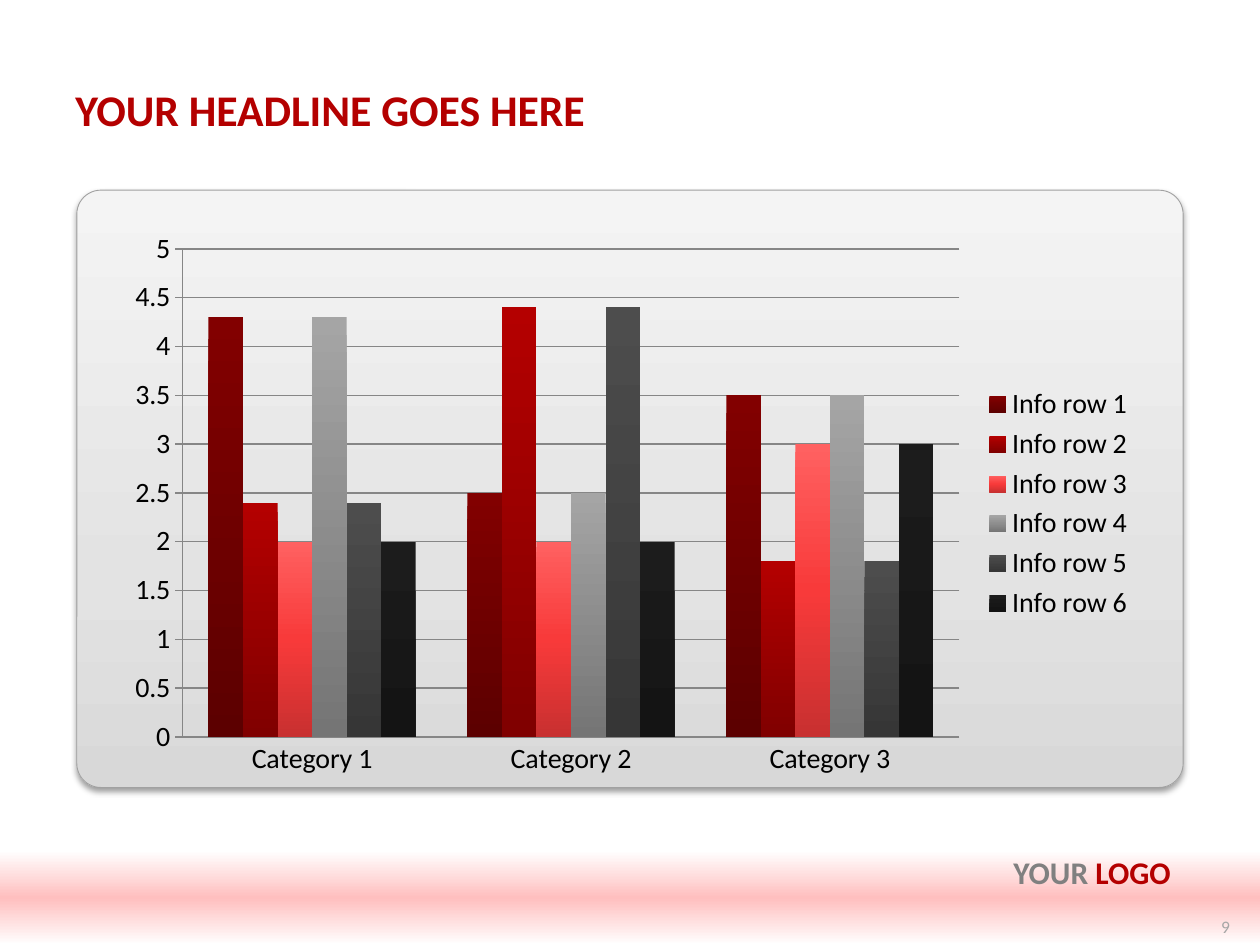
import pptx
import pptx.chart.data
import pptx.dml.color
import pptx.enum.chart
import pptx.enum.shapes
import pptx.enum.text
import pptx.oxml
import pptx.oxml.ns
import pptx.util
from lxml import etree

Inches, Pt = pptx.util.Inches, pptx.util.Pt
qn = pptx.oxml.ns.qn
shapes = pptx.enum.shapes.MSO_SHAPE
kinds = pptx.enum.chart
aligns = pptx.enum.text.PP_ALIGN
anchors = pptx.enum.text.MSO_ANCHOR


def color(code):
    return pptx.dml.color.RGBColor.from_string(code)


def grade(fill, props, stops):
    fill.gradient()
    fill.gradient_angle = 270
    stop_list = props.find(".//" + qn("a:gsLst"))
    for old in list(stop_list):
        stop_list.remove(old)
    for place, code in stops:
        stop = etree.SubElement(stop_list, qn("a:gs"), pos=str(place * 1000))
        etree.SubElement(stop, qn("a:srgbClr"), val=code)


deck = pptx.Presentation()
deck.slide_width, deck.slide_height = Inches(10), Inches(7.5)
slide = deck.slides.add_slide(deck.slide_layouts[6])

panel = slide.shapes.add_shape(
    shapes.ROUNDED_RECTANGLE, Inches(0.61), Inches(1.51), Inches(8.78), Inches(4.74))
panel.adjustments[0] = 0.04
grade(panel.fill, panel._element.spPr, [(0, "F4F4F4"), (65, "E3E3E3"), (100, "D8D8D8")])
panel.line.color.rgb = color("A1A1A1")
panel.line.width = Pt(0.5)
panel._element.spPr.append(pptx.oxml.parse_xml(
    '<a:effectLst xmlns:a="http://schemas.openxmlformats.org/drawingml/2006/main">'
    '<a:outerShdw blurRad="44450" dist="25400" dir="5400000" rotWithShape="0">'
    '<a:srgbClr val="000000"><a:alpha val="38000"/></a:srgbClr>'
    '</a:outerShdw></a:effectLst>'))

band = slide.shapes.add_shape(
    shapes.RECTANGLE, 0, Inches(6.75), Inches(10), Inches(0.75))
band.shadow.inherit = False
band.line.fill.background()
grade(band.fill, band._element.spPr, [(0, "FFFFFF"), (50, "FFBFBF"), (100, "FFFFFF")])

data = pptx.chart.data.CategoryChartData()
data.categories = [f"Category {n}" for n in range(1, 4)]
rows = [(4.3, 2.5, 3.5), (2.4, 4.4, 1.8), (2, 2, 3)] * 2
for n, row in enumerate(rows, 1):
    data.add_series(f"Info row {n}", row)
chart = slide.shapes.add_chart(
    kinds.XL_CHART_TYPE.COLUMN_CLUSTERED,
    Inches(0.91), Inches(1.75), Inches(8.19), Inches(4.5), data).chart
chart.has_title = False
chart.font.name = "Calibri"
chart.font.size = Pt(18)
chart.font.color.rgb = color("000000")
chart.has_legend = True
chart.legend.position = kinds.XL_LEGEND_POSITION.RIGHT
chart.legend.include_in_layout = False
chart.legend.font.size = Pt(16)

plot = chart.plots[0]
plot.gap_width = 150
plot.overlap = 0
plot.vary_by_categories = False
tints = [("820000", "5C0000"), ("B40000", "800000"), ("FF6161", "F83A3A", "C83030"),
         ("A5A5A5", "757575"), ("4D4D4D", "363636"), ("1C1C1C", "141414")]
for bars, codes in zip(plot.series, tints):
    step = 100 // (len(codes) - 1)
    grade(bars.format.fill, bars._element.spPr,
          [(n * step, code) for n, code in enumerate(codes)])

base, scale = chart.category_axis, chart.value_axis
for axis in (base, scale):
    axis.tick_labels.font.size = Pt(16)
    axis.major_tick_mark = kinds.XL_TICK_MARK.OUTSIDE
base.major_tick_mark = kinds.XL_TICK_MARK.NONE
base.format.line.fill.background()
scale.minimum_scale, scale.maximum_scale, scale.major_unit = 0, 5, 0.5
scale.has_major_gridlines = True
for line in (scale.format.line, scale.major_gridlines.format.line):
    line.color.rgb = color("868686")
    line.width = Pt(0.75)

texts = [
    ((0.5, 0.59, 9, 0.55), 25, True, aligns.LEFT, anchors.MIDDLE,
     [("YOUR HEADLINE GOES HERE", "B40000")]),
    ((9.39, 7.2, 0.47, 0.3), 10, False, aligns.RIGHT, anchors.MIDDLE, [("9", "A6A6A6")]),
    ((0.5, 6.72, 8.89, 0.55), 18, True, aligns.RIGHT, anchors.TOP,
     [("YOUR ", "808080"), ("LOGO", "B40000")]),
]
for place, size, bold, align, anchor, parts in texts:
    frame = slide.shapes.add_textbox(*map(Inches, place)).text_frame
    frame.word_wrap = True
    frame.vertical_anchor = anchor
    para = frame.paragraphs[0]
    para.alignment = align
    para.font.name = "Calibri"
    para.font.size = Pt(size)
    para.font.bold = bold
    for words, code in parts:
        run = para.add_run()
        run.text = words
        run.font.color.rgb = color(code)

deck.save("out.pptx")
